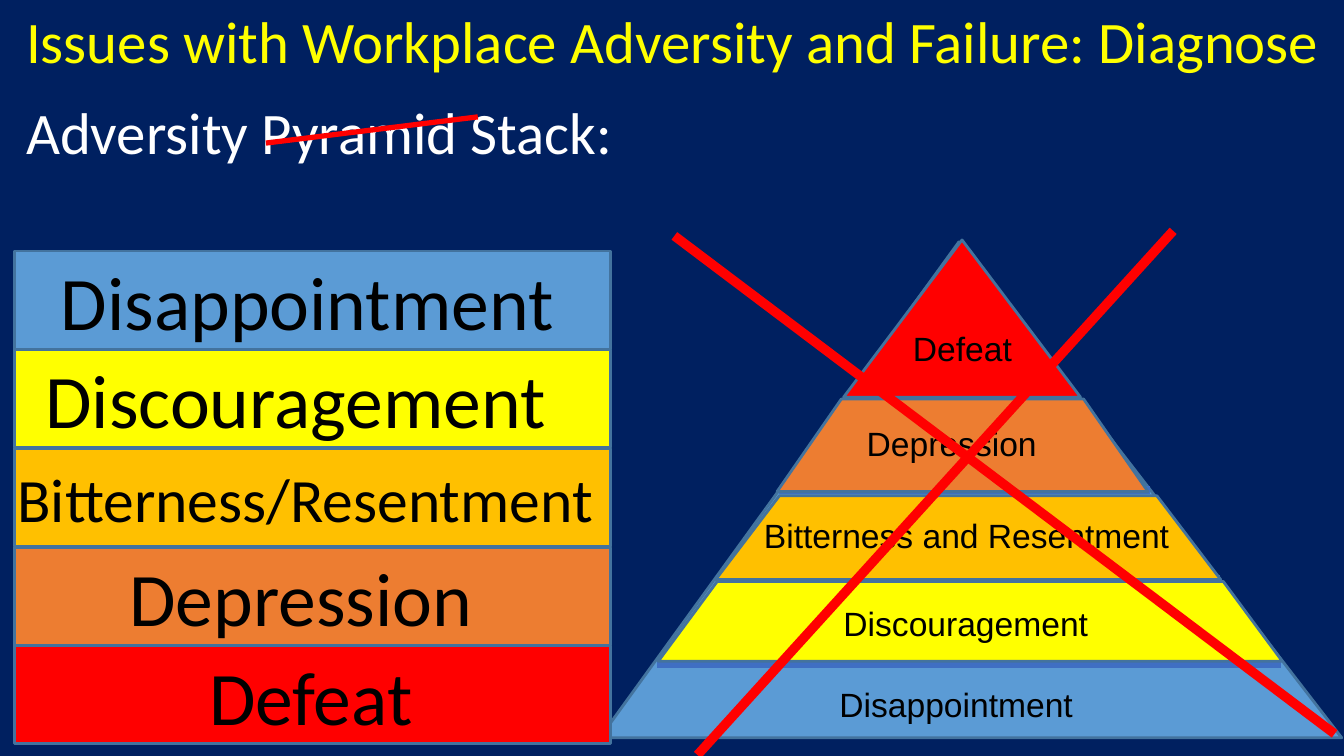
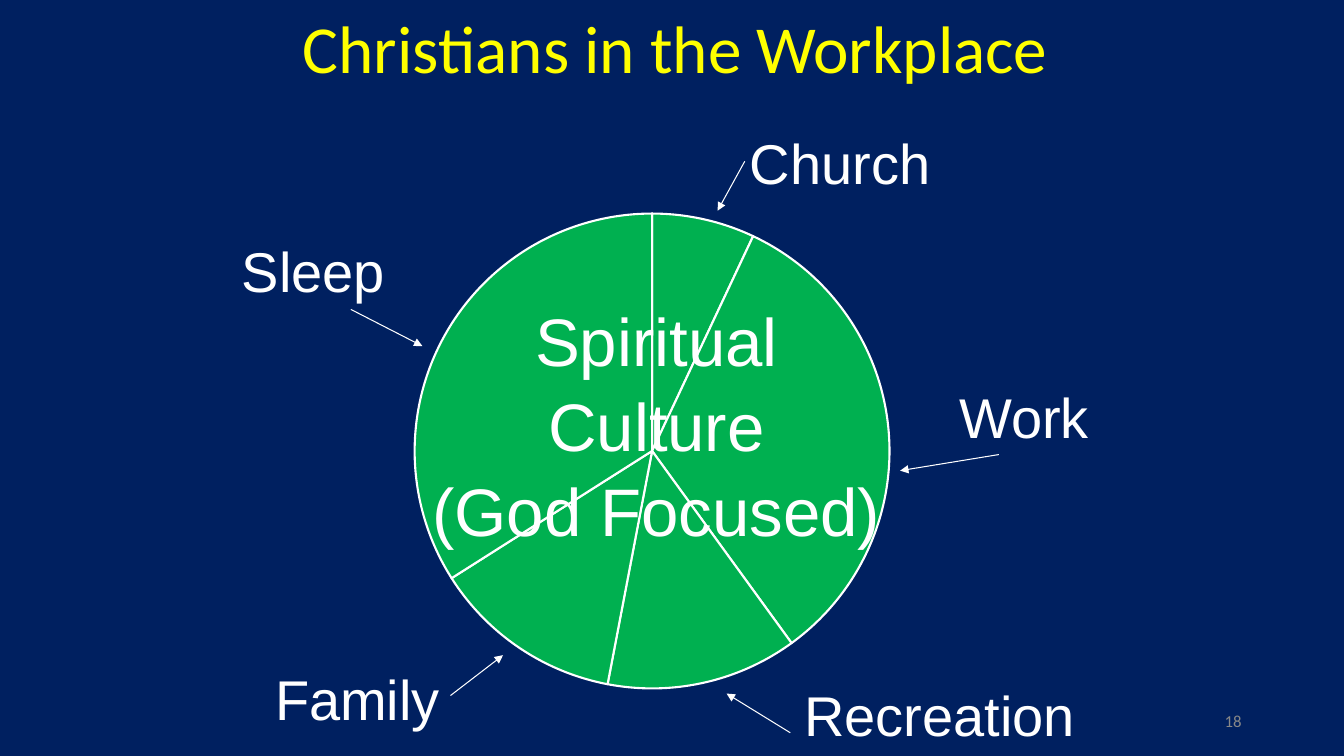
import dataclasses
from typing import NamedTuple

import lxml.etree
import pptx
import pptx.chart.data
import pptx.dml.color
import pptx.enum.chart
import pptx.enum.shapes
import pptx.enum.text
import pptx.oxml.ns
import pptx.util

Pt = pptx.util.Pt
ALIGN = pptx.enum.text.PP_ALIGN
ANCHOR = pptx.enum.text.MSO_ANCHOR
PRESET = pptx.enum.shapes.MSO_SHAPE

NAVY, WHITE, BLACK, GRAY = "002060", "FFFFFF", "000000", "888888"
BLUE, YELLOW, AMBER, ORANGE, RED = "5B9BD5", "FFFF00", "FFC000", "ED7D31", "FF0000"
OUTLINE, RULE, GREEN = "43739E", "3F6FC3", "00B050"
HEADING_FONT, LABEL_FONT = "Calibri", "Arial"


class Box(NamedTuple):
    left: float
    top: float
    width: float
    height: float

    def lengths(self) -> list:
        return [Pt(value) for value in self]


class Line(NamedTuple):
    x1: float
    y1: float
    x2: float
    y2: float


@dataclasses.dataclass
class Style:
    size: float
    color: str
    font: str = LABEL_FONT
    align: ALIGN = ALIGN.LEFT
    anchor: ANCHOR = ANCHOR.TOP
    space_after: float = 0


@dataclasses.dataclass
class Band:
    label: str
    color: str
    indent: float
    size: float = 54


@dataclasses.dataclass
class Level:
    label: str
    color: str
    label_left: float
    label_top: float
    box: Box
    preset: PRESET = PRESET.TRAPEZOID
    slope: float = 0.5


@dataclasses.dataclass
class Activity:
    label: str
    share: int
    left: float
    top: float
    arrow: Line


BANDS = [
    Band("Disappointment", BLUE, 33),
    Band("Discouragement", YELLOW, 22),
    Band("Bitterness/Resentment", AMBER, 2, 44),
    Band("Depression", ORANGE, 82),
    Band("Defeat", RED, 139),
]
BAND_TOP, BAND_PITCH = 179.3, 70.5

BASE = Level("Disappointment", BLUE, 592.5, 485, Box(428.4, 172.8, 530, 354.2),
             PRESET.ISOSCELES_TRIANGLE, 0.484)
UPPER_LEVELS = [
    Level("Defeat", RED, 645, 231, Box(602.6, 171.4, 169.2, 112.3),
          PRESET.ISOSCELES_TRIANGLE),
    Level("Depression", ORANGE, 612, 298.7, Box(555, 285, 265, 66.2), slope=0.695),
    Level("Bitterness and Resentment", AMBER, 538.6, 364, Box(511.2, 354.2, 360.7, 59.8),
          slope=0.761),
    Level("Discouragement", YELLOW, 595.4, 426.8, Box(470.2, 415.4, 445.7, 56.9),
          slope=0.739),
]
LEVEL_RULES = [
    Line(601, 287.3, 771, 287.3),
    Line(556.5, 350, 821.5, 350),
    Line(511.2, 413.3, 871.2, 413.3),
    Line(469.4, 474.5, 915, 474.5),
]
WORD_STRIKE = Line(190, 102.2, 341.3, 83.5)
PYRAMID_CROSS = [Line(481.7, 168.5, 953.3, 524.2), Line(838, 164.9, 498.2, 539.3)]

ACTIVITIES = [
    Activity("Church", 7, 528.5, 88.5, Line(532, 115.2, 512.6, 150.5)),
    Activity("Work", 33, 678.2, 270, Line(713.5, 324.7, 643, 336.2)),
    Activity("Recreation", 13, 567.4, 482.5, Line(564.5, 523.4, 519, 495.4)),
    Activity("Family", 13, 189.4, 471.5, Line(321.8, 496.8, 359.3, 468)),
    Activity("Sleep", 34, 165.6, 165.5, Line(250.6, 221, 301.7, 247.2)),
]


def rgb(value: str) -> pptx.dml.color.RGBColor:
    return pptx.dml.color.RGBColor.from_string(value)


def write(frame, lines: list[str], style: Style) -> None:
    """Fill a text frame with one paragraph per line."""
    frame.word_wrap = True
    frame.auto_size = pptx.enum.text.MSO_AUTO_SIZE.NONE
    frame.vertical_anchor = style.anchor
    for number, line in enumerate(lines):
        paragraph = frame.add_paragraph() if number else frame.paragraphs[0]
        paragraph.alignment = style.align
        paragraph.space_after = Pt(style.space_after)
        run = paragraph.add_run()
        run.text = line
        run.font.name = style.font
        run.font.size = Pt(style.size)
        run.font.color.rgb = rgb(style.color)


def add_text(slide, box: Box, lines: list[str], style: Style) -> None:
    write(slide.shapes.add_textbox(*box.lengths()).text_frame, lines, style)


def add_titled_slide(deck, title: str, box: Box, size: float, align: ALIGN):
    slide = deck.slides.add_slide(deck.slide_layouts[5])
    heading = slide.shapes.title
    heading.left, heading.top, heading.width, heading.height = box.lengths()
    write(heading.text_frame, [title], Style(size, YELLOW, HEADING_FONT, align))
    return slide


def add_panel(slide, preset: PRESET, box: Box, color: str):
    panel = slide.shapes.add_shape(preset, *box.lengths())
    panel.shadow.inherit = False
    panel.fill.solid()
    panel.fill.fore_color.rgb = rgb(color)
    panel.line.color.rgb = rgb(OUTLINE)
    panel.line.width = Pt(2)
    return panel


def add_line(slide, line: Line, color: str, weight: float, arrow: bool = False) -> None:
    connector = slide.shapes.add_connector(
        pptx.enum.shapes.MSO_CONNECTOR.STRAIGHT, *[Pt(value) for value in line])
    connector.line.color.rgb = rgb(color)
    connector.line.width = Pt(weight)
    qn = pptx.oxml.ns.qn
    if arrow:
        outline = connector.line._get_or_add_ln()
        lxml.etree.SubElement(outline, qn("a:tailEnd"), type="triangle")
    lxml.etree.SubElement(connector._element.spPr, qn("a:effectLst"))


def add_level(slide, level: Level) -> None:
    panel = add_panel(slide, level.preset, level.box, level.color)
    panel.adjustments[0] = level.slope


def add_pyramid(slide) -> None:
    add_level(slide, BASE)
    for rule in LEVEL_RULES:
        add_line(slide, rule, RULE, 5.25)
    for level in UPPER_LEVELS:
        add_level(slide, level)
    for level in [BASE, *UPPER_LEVELS]:
        add_text(slide, Box(level.label_left, level.label_top, 335, 36),
                 [level.label], Style(24, BLACK))


def add_stack(slide) -> None:
    for number, band in enumerate(BANDS):
        box = Box(10.5, BAND_TOP + number * BAND_PITCH, 425.5, 70)
        frame = add_panel(slide, PRESET.RECTANGLE, box, band.color).text_frame
        frame.margin_left = Pt(band.indent)
        frame.margin_top = frame.margin_right = frame.margin_bottom = 0
        write(frame, [band.label],
              Style(band.size, BLACK, HEADING_FONT, anchor=ANCHOR.MIDDLE))


def set_plot_area(chart, x: float, y: float, w: float, h: float) -> None:
    """Place the inner plot area, in fractions of the chart."""
    qn = pptx.oxml.ns.qn
    plot_area = chart._chartSpace.chart.plotArea
    for old in plot_area.findall(qn("c:layout")):
        plot_area.remove(old)
    layout = lxml.etree.Element(qn("c:layout"))
    manual = lxml.etree.SubElement(layout, qn("c:manualLayout"))
    settings = dict(layoutTarget="inner", xMode="edge", yMode="edge", x=x, y=y, w=w, h=h)
    for name, value in settings.items():
        lxml.etree.SubElement(manual, qn(f"c:{name}"), val=str(value))
    plot_area.insert(0, layout)


def add_activity_pie(slide) -> None:
    shares = pptx.chart.data.CategoryChartData()
    shares.categories = [str(number + 1) for number in range(len(ACTIVITIES))]
    shares.add_series("Series 1", [activity.share for activity in ACTIVITIES])
    chart = slide.shapes.add_chart(
        pptx.enum.chart.XL_CHART_TYPE.PIE, *Box(149, 144.7, 640, 362.2).lengths(), shares).chart
    chart.has_legend = False
    chart.has_title = False
    chart.font.name = HEADING_FONT
    chart.font.size = Pt(10)
    chart.font.color.rgb = rgb(WHITE)
    pie = chart.plots[0]
    pie.vary_by_categories = False
    for number in range(len(ACTIVITIES)):
        wedge = pie.series[0].points[number].format
        wedge.fill.solid()
        wedge.fill.fore_color.rgb = rgb(GREEN)
        wedge.line.color.rgb = rgb(WHITE)
        wedge.line.width = Pt(1.5)
    set_plot_area(chart, 0.23, 0.02, 0.53, 0.94)


def build_adversity_slide(deck) -> None:
    slide = add_titled_slide(deck, "Issues with Workplace Adversity and Failure: Diagnose",
                             Box(11.5, 0, 948, 58), 42, ALIGN.LEFT)
    add_text(slide, Box(11.5, 65, 948, 58), ["Adversity Pyramid Stack:"],
             Style(42, WHITE, HEADING_FONT))
    add_pyramid(slide)
    add_stack(slide)
    add_line(slide, WORD_STRIKE, RED, 3.75)
    for stroke in PYRAMID_CROSS:
        add_line(slide, stroke, RED, 6.75)


def build_culture_slide(deck) -> None:
    slide = add_titled_slide(deck, "Christians in the Workplace",
                             Box(44, 1, 877, 66), 48, ALIGN.CENTER)
    add_activity_pie(slide)
    for activity in ACTIVITIES:
        add_text(slide, Box(activity.left, activity.top, 270, 55),
                 [activity.label], Style(40, WHITE))
        add_line(slide, activity.arrow, WHITE, 0.75, arrow=True)
    add_text(slide, Box(300, 210.5, 338, 181), ["Spiritual", "Culture", "(God Focused)"],
             Style(48, WHITE, align=ALIGN.CENTER, space_after=3))
    add_text(slide, Box(678, 500.5, 216, 29), ["18"],
             Style(12, GRAY, HEADING_FONT, ALIGN.RIGHT, ANCHOR.MIDDLE))


def main() -> None:
    deck = pptx.Presentation()
    deck.slide_width, deck.slide_height = Pt(960), Pt(540)
    backdrop = deck.slide_master.background.fill
    backdrop.solid()
    backdrop.fore_color.rgb = rgb(NAVY)
    build_adversity_slide(deck)
    build_culture_slide(deck)
    deck.save("out.pptx")


if __name__ == "__main__":
    main()
